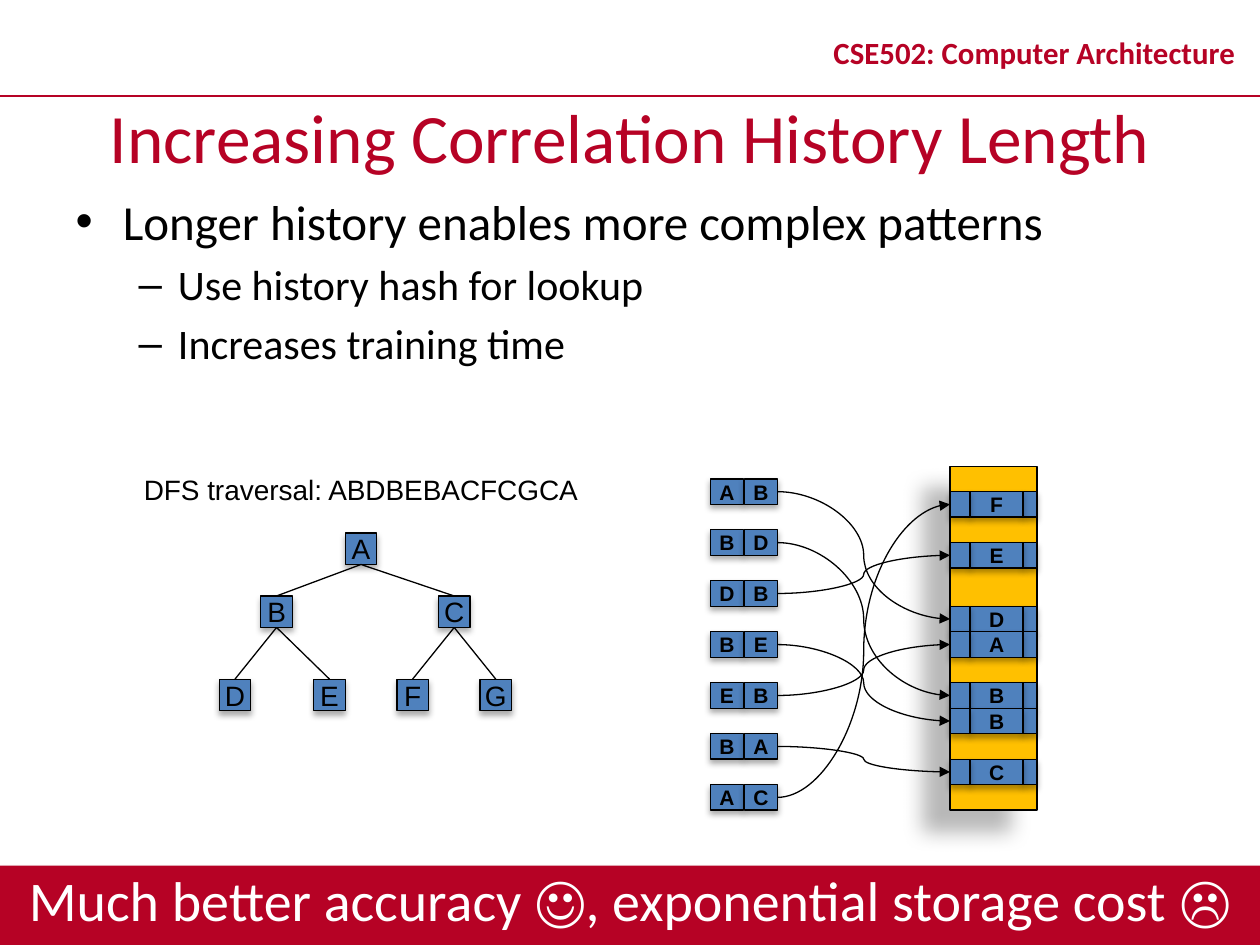
from dataclasses import dataclass

from lxml.etree import SubElement
from pptx import Presentation
from pptx.dml.color import RGBColor
from pptx.enum.shapes import MSO_CONNECTOR as Link, MSO_SHAPE as Preset
from pptx.enum.text import MSO_ANCHOR as Anchor, MSO_AUTO_SIZE as Fit, PP_ALIGN as Align
from pptx.oxml.ns import qn
from pptx.util import Inches, Pt


@dataclass(frozen=True)
class Theme:
    """Colours, fonts, type sizes and shadows of the slide."""
    crimson: str = "B60225"
    blue: str = "4F81BD"
    amber: str = "FFC000"
    black: str = "000000"
    white: str = "FFFFFF"
    heading_font: str = "Calibri"
    diagram_font: str = "Arial"
    title: float = 39.6
    course: float = 17.6
    bullets: tuple = (28, 24)
    takeaway: float = 32
    node: float = 16
    cell: float = 12
    outline: float = 0.75
    rule: float = 1
    cell_shadow: tuple = (32, 3.5, 2.2, 90)
    bar_shadow: tuple = (35, 3.1, 1.8, 90)
    table_shadow: tuple = (28, 11.8, 19.7, 141)


class SlideBuilder:
    """Adds styled elements to one slide."""

    def __init__(self, slide, theme):
        """Keep the slide and its theme."""
        self.slide = slide
        self.theme = theme

    def add_text(self, paragraph, text, size, color, font, bold=False):
        """Add one formatted run to a paragraph."""
        run = paragraph.add_run()
        run.text = text
        run.font.size = Pt(size)
        run.font.name = font
        run.font.bold = bold
        run.font.color.rgb = RGBColor.from_string(color)

    def place(self, shape, left, top, width, height):
        """Move and resize a shape."""
        shape.left, shape.top = Inches(left), Inches(top)
        shape.width, shape.height = Inches(width), Inches(height)

    def title(self, text, *box):
        """Fill the title placeholder."""
        heading = self.slide.shapes.title
        self.place(heading, *box)
        heading.text_frame.auto_size = Fit.NONE
        self.add_text(heading.text_frame.paragraphs[0], text, self.theme.title,
                      self.theme.crimson, self.theme.heading_font)

    def bullets(self, points, *box):
        """Fill the body placeholder with (level, text) points."""
        body = self.slide.placeholders[1]
        self.place(body, *box)
        frame = body.text_frame
        frame.auto_size = Fit.NONE
        for index, (level, text) in enumerate(points):
            paragraph = frame.add_paragraph() if index else frame.paragraphs[0]
            paragraph.level = level
            self.add_text(paragraph, text, self.theme.bullets[level],
                          self.theme.black, self.theme.heading_font)

    def label(self, text, box, size, color, font, bold=False, wrap=True,
              anchor=Anchor.TOP, spacing=None):
        """Add a centred text box."""
        frame = self.slide.shapes.add_textbox(*map(Inches, box)).text_frame
        frame.word_wrap = wrap
        frame.vertical_anchor = anchor
        paragraph = frame.paragraphs[0]
        paragraph.alignment = Align.CENTER
        paragraph.line_spacing = spacing
        self.add_text(paragraph, text, size, color, font, bold)

    def panel(self, box, fill, shadow, outlined=True, parent=None):
        """Add a filled rectangle with a soft shadow."""
        shapes = (parent or self.slide).shapes
        panel = shapes.add_shape(Preset.RECTANGLE, *map(Inches, box))
        panel.fill.solid()
        panel.fill.fore_color.rgb = RGBColor.from_string(fill)
        if outlined:
            self.stroke(panel.line, self.theme.black, self.theme.outline)
        else:
            panel.line.fill.background()
        panel.shadow.inherit = False
        alpha, blur, distance, angle = shadow
        effects = panel.element.spPr.find(qn("a:effectLst"))
        outer = SubElement(effects, qn("a:outerShdw"), blurRad=str(Pt(blur)),
                           dist=str(Pt(distance)), dir=str(angle * 60000),
                           algn="ctr", rotWithShape="0")
        tint = SubElement(outer, qn("a:srgbClr"), val=self.theme.black)
        SubElement(tint, qn("a:alpha"), val=str(alpha * 1000))
        return panel

    def cell(self, box, text="", size=None, bold=True, parent=None):
        """Add a blue cell, with a centred letter if given."""
        cell = self.panel(box, self.theme.blue, self.theme.cell_shadow, parent=parent)
        if text:
            frame = cell.text_frame
            frame.word_wrap = False
            frame.vertical_anchor = Anchor.MIDDLE
            frame.margin_left = frame.margin_right = 0
            frame.paragraphs[0].alignment = Align.CENTER
            self.add_text(frame.paragraphs[0], text, size or self.theme.cell,
                          self.theme.black, self.theme.diagram_font, bold)
        return cell

    def stroke(self, line, color, width):
        """Set the colour and width of a line."""
        line.color.rgb = RGBColor.from_string(color)
        line.width = Pt(width)

    def line(self, kind, color, width, ends=(0, 0, 0, 0)):
        """Add a connector without a shadow."""
        line = self.slide.shapes.add_connector(kind, *map(Inches, ends))
        self.stroke(line.line, color, width)
        SubElement(line.element.spPr, qn("a:effectLst"))
        return line

    def join(self, start, start_side, end, end_side, kind=Link.STRAIGHT, arrow=False):
        """Connect two cells at the given sides."""
        link = self.line(kind, self.theme.black, self.theme.outline)
        link.begin_connect(start, start_side)
        link.end_connect(end, end_side)
        if arrow:
            SubElement(link.element.spPr.find(qn("a:ln")), qn("a:tailEnd"), type="triangle")


def draw_frame(builder):
    """Draw the course header and the takeaway bar."""
    theme = builder.theme
    builder.panel((0, 6.87, 10, 0.63), theme.crimson, theme.bar_shadow, outlined=False)
    builder.line(Link.STRAIGHT, theme.crimson, theme.rule, (0, 0.76, 10, 0.76))
    builder.label("CSE502: Computer Architecture", (6.42, 0.13, 3.58, 0.63), theme.course,
                  theme.crimson, theme.heading_font, True, anchor=Anchor.MIDDLE, spacing=0.8)
    builder.label("Much better accuracy ☺, exponential storage cost ☹",
                  (0, 6.82, 10, 0.63), theme.takeaway, theme.white, theme.heading_font)


def draw_tree(builder):
    """Draw the binary tree and its traversal."""
    theme = builder.theme
    builder.label("DFS traversal: ABDBEBACFCGCA", (1.02, 3.7, 3.69, 0.37), theme.node,
                  theme.black, theme.diagram_font, wrap=False)
    corners = {"A": (2.74, 4.23), "B": (2.07, 4.73), "C": (3.48, 4.73), "D": (1.74, 5.39),
               "E": (2.49, 5.39), "F": (3.15, 5.39), "G": (3.81, 5.39)}
    nodes = {name: builder.cell((*corner, 0.25, 0.25), name, theme.node, bold=False)
             for name, corner in corners.items()}
    for parent, child in ("AB", "BD", "BE", "AC", "CF", "CG"):
        builder.join(nodes[parent], 2, nodes[child], 0)


def draw_table(builder):
    """Draw the history pairs and the table entries they select."""
    theme = builder.theme
    top, height = 3.7, 2.73
    slot = height / 13.5
    builder.panel((7.54, top, 0.69, height), theme.amber, theme.table_shadow)
    lookups = (("AB", "D", 5.5), ("BD", "B", 8.5), ("DB", "E", 3), ("BE", "B", 9.5),
               ("EB", "A", 6.5), ("BA", "C", 11.5), ("AC", "F", 1))
    for row, (history, prediction, position) in enumerate(lookups):
        history_top = top + (0.5 + 2 * row) * slot
        pair = builder.slide.shapes.add_group_shape()
        older, newer = [builder.cell((left, history_top, 0.26, slot), letter, parent=pair)
                        for left, letter in zip((5.64, 5.91), history)]
        entry_top = top + position * slot
        builder.cell((8.12, entry_top, 0.11, slot))
        builder.cell((7.7, entry_top, 0.42, slot), prediction)
        tag = builder.cell((7.54, entry_top, 0.16, slot))
        builder.join(newer, 3, tag, 1, Link.CURVE, arrow=True)


def main():
    """Build and save the slide."""
    deck = Presentation()
    deck.slide_width, deck.slide_height = Inches(10), Inches(7.5)
    builder = SlideBuilder(deck.slides.add_slide(deck.slide_layouts[1]), Theme())
    draw_frame(builder)
    builder.title("Increasing Correlation History Length", 0, 0.76, 10, 0.63)
    builder.bullets([(0, "Longer history enables more complex patterns"),
                     (1, "Use history hash for lookup"),
                     (1, "Increases training time")], 0.5, 1.47, 9, 5.35)
    draw_tree(builder)
    draw_table(builder)
    deck.save("out.pptx")


if __name__ == "__main__":
    main()
